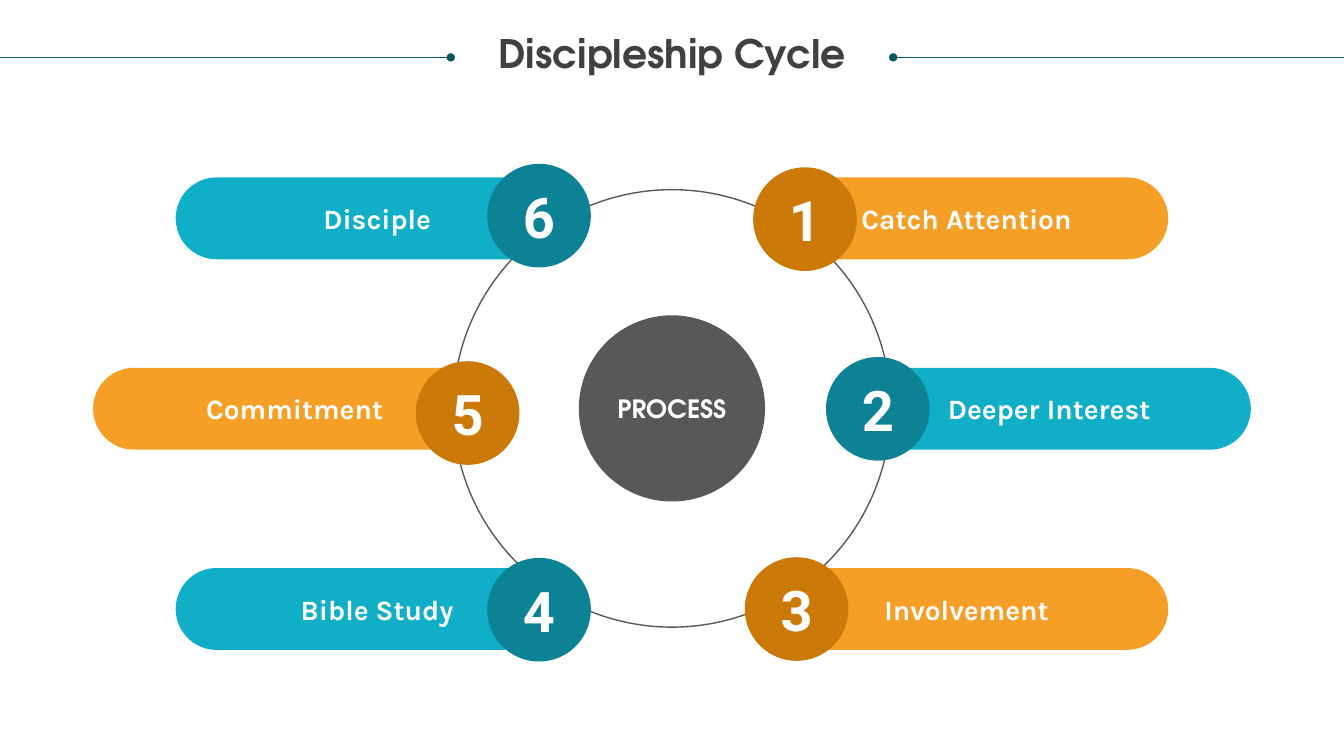
from lxml.etree import SubElement
from pptx import Presentation
from pptx.dml.color import RGBColor
from pptx.enum.shapes import MSO_CONNECTOR, MSO_SHAPE
from pptx.enum.text import MSO_ANCHOR, PP_ALIGN
from pptx.oxml.ns import qn
from pptx.util import Pt

COLORS = {
    "orange": "F59F26", "dark orange": "CB7A09",
    "teal": "11AEC7", "dark teal": "0D8295",
    "gray": "585858", "title": "404040", "rule": "085764", "white": "FFFFFF",
}
HEADING_FONT, LABEL_FONT, NUMBER_FONT = "TeX Gyre Adventor", "Karla", "Roboto"

TITLE = "Discipleship Cycle"
HUB = "PROCESS"
# number, label, color, side, row, badge center
STEPS = [
    ("1", "Catch Attention", "orange", "right", 0, (575, 156.5)),
    ("2", "Deeper Interest", "teal", "right", 1, (627, 292)),
    ("3", "Involvement", "orange", "right", 2, (569, 435)),
    ("4", "Bible Study", "teal", "left", 2, (385, 435.5)),
    ("5", "Commitment", "orange", "left", 1, (334, 295)),
    ("6", "Disciple", "teal", "left", 0, (385, 154)),
]

SLIDE_W, SLIDE_H = 960, 540
CENTER = (SLIDE_W / 2, 291.75)
RING_SIZE, HUB_SIZE, BADGE_SIZE = 312.5, 133, 74
PILL_W, PILL_H = 288, 58.5
ROWS = [(210.5, 156), (269.5, 292), (210.5, 435)]  # pill offset from center, y
RULE_Y, RULE_LENGTH = 41, 322

prs = Presentation()
prs.slide_width, prs.slide_height = Pt(SLIDE_W), Pt(SLIDE_H)
slide = prs.slides.add_slide(prs.slide_layouts[6])


def rgb(name):
    return RGBColor.from_string(COLORS[name])


def write(frame, text, size, font, color):
    paragraph = frame.paragraphs[0]
    paragraph.alignment = PP_ALIGN.CENTER
    run = paragraph.add_run()
    run.text = text
    run.font.size, run.font.name, run.font.bold = Pt(size), font, True
    run.font.color.rgb = rgb(color)


def add_centered(preset, center, width, height, fill=None):
    """Add a borderless preset shape around its center point."""
    x, y = center
    shape = slide.shapes.add_shape(
        preset, Pt(x - width / 2), Pt(y - height / 2), Pt(width), Pt(height))
    shape.shadow.inherit = False
    shape.line.fill.background()
    if fill:
        shape.fill.solid()
        shape.fill.fore_color.rgb = rgb(fill)
    else:
        shape.fill.background()
    shape.text_frame.vertical_anchor = MSO_ANCHOR.MIDDLE
    return shape


def add_title_rule(slide_edge, dot_x):
    rule = slide.shapes.add_connector(
        MSO_CONNECTOR.STRAIGHT, Pt(slide_edge), Pt(RULE_Y), Pt(dot_x), Pt(RULE_Y))
    rule.line.color.rgb = rgb("rule")
    rule.line.width = Pt(0.5)
    SubElement(rule.line._get_or_add_ln(), qn("a:tailEnd"), type="oval")
    SubElement(rule._element.spPr, qn("a:effectLst"))


def add_step(number, label, color, side, row, badge_center):
    offset, y = ROWS[row]
    direction = 1 if side == "right" else -1
    pill = add_centered(MSO_SHAPE.ROUNDED_RECTANGLE,
                        (CENTER[0] + direction * offset, y), PILL_W, PILL_H, color)
    pill.adjustments[0] = 0.5
    write(pill.text_frame, label, 20, LABEL_FONT, "white")
    badge = add_centered(MSO_SHAPE.OVAL, badge_center, BADGE_SIZE, BADGE_SIZE,
                         f"dark {color}")
    write(badge.text_frame, number, 40, NUMBER_FONT, "white")


ring = add_centered(MSO_SHAPE.OVAL, CENTER, RING_SIZE, RING_SIZE)
ring.line.color.rgb = rgb("gray")
ring.line.width = Pt(1)

add_title_rule(0, RULE_LENGTH)
add_title_rule(SLIDE_W, SLIDE_W - RULE_LENGTH)
title = slide.shapes.add_textbox(Pt(18), Pt(25), Pt(924), Pt(61)).text_frame
title.word_wrap = True
title.margin_left = title.margin_right = title.margin_top = title.margin_bottom = 0
title.paragraphs[0].line_spacing = 0.9
write(title, TITLE, 28, HEADING_FONT, "title")

hub = add_centered(MSO_SHAPE.OVAL, CENTER, HUB_SIZE, HUB_SIZE, "gray")
write(hub.text_frame, HUB, 18, HEADING_FONT, "white")

for step in STEPS:
    add_step(*step)

prs.save("out.pptx")
